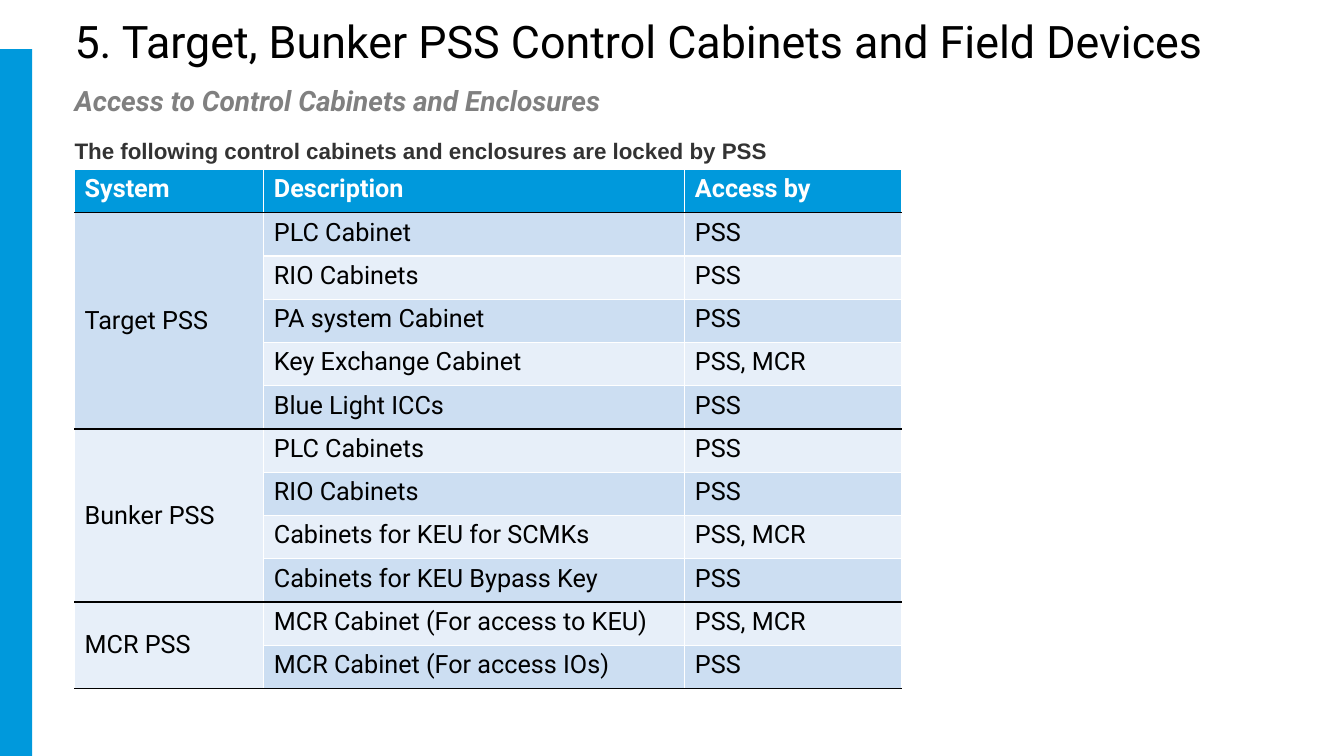
from dataclasses import dataclass

from lxml.etree import SubElement
from pptx import Presentation
from pptx.dml.color import RGBColor
from pptx.enum.shapes import MSO_SHAPE as Preset
from pptx.enum.text import MSO_ANCHOR as Anchor
from pptx.oxml.ns import qn
from pptx.slide import Slide
from pptx.table import _Cell as Cell
from pptx.text.text import TextFrame
from pptx.util import Cm, Pt


@dataclass(frozen=True)
class TextStyle:
    size: float
    color: str
    font: str = "Roboto"
    bold: bool = False
    italic: bool = False


@dataclass(frozen=True)
class Theme:
    accent: str = "0099DC"
    bands: tuple[str, str] = ("E7EFF9", "CCDEF2")
    grid: str = "FFFFFF"
    rule: str = "000000"
    title: TextStyle = TextStyle(32, "000000")
    subtitle: TextStyle = TextStyle(20, "808080", bold=True, italic=True)
    caption: TextStyle = TextStyle(16, "333333", font="Arial", bold=True)
    header: TextStyle = TextStyle(18, "FFFFFF", bold=True)
    body: TextStyle = TextStyle(18, "000000")


@dataclass(frozen=True)
class Heading:
    text: str
    style: TextStyle
    top: float
    width: float
    height: float
    anchor: Anchor = Anchor.TOP


@dataclass(frozen=True)
class System:
    name: str
    cabinets: tuple[tuple[str, str], ...]


THEME = Theme()

HEADINGS = (
    Heading("5. Target, Bunker PSS Control Cabinets and Field Devices",
            THEME.title, 0.15, 31.24, 1.75, Anchor.MIDDLE),
    Heading("Access to Control Cabinets and Enclosures", THEME.subtitle, 1.98, 24.05, 1.12),
    Heading("The following control cabinets and enclosures are locked by PSS",
            THEME.caption, 3.33, 19.66, 0.94),
)

COLUMNS = (("System", 4.77), ("Description", 10.61), ("Access by", 5.45))
ROW_HEIGHT = 1.09

SYSTEMS = (
    System("Target PSS", (
        ("PLC Cabinet", "PSS"),
        ("RIO Cabinets", "PSS"),
        ("PA system Cabinet", "PSS"),
        ("Key Exchange Cabinet", "PSS, MCR"),
        ("Blue Light ICCs", "PSS"),
    )),
    System("Bunker PSS", (
        ("PLC Cabinets", "PSS"),
        ("RIO Cabinets", "PSS"),
        ("Cabinets for KEU for SCMKs", "PSS, MCR"),
        ("Cabinets for KEU Bypass Key", "PSS"),
    )),
    System("MCR PSS", (
        ("MCR Cabinet (For access to KEU)", "PSS, MCR"),
        ("MCR Cabinet (For access IOs)", "PSS"),
    )),
)


def write(frame: TextFrame, text: str, style: TextStyle) -> None:
    run = frame.paragraphs[0].add_run()
    run.text = text
    font = run.font
    font.name, font.size = style.font, Pt(style.size)
    font.bold, font.italic = style.bold, style.italic
    font.color.rgb = RGBColor.from_string(style.color)


def add_heading(slide: Slide, heading: Heading) -> None:
    box = slide.shapes.add_textbox(
        Cm(1.63), Cm(heading.top), Cm(heading.width), Cm(heading.height))
    frame = box.text_frame
    frame.word_wrap = True
    frame.vertical_anchor = heading.anchor
    write(frame, heading.text, heading.style)


def add_side_bar(slide: Slide) -> None:
    bar = slide.shapes.add_shape(Preset.RECTANGLE, 0, Cm(1.24), Cm(0.81), Cm(17.81))
    bar.shadow.inherit = False
    bar.fill.solid()
    bar.fill.fore_color.rgb = RGBColor.from_string(THEME.accent)
    bar.line.fill.background()


def paint(cell: Cell, fill: str, top: str, bottom: str) -> None:
    """Set the four borders, then the fill, of one cell."""
    properties = cell._tc.get_or_add_tcPr()
    edges = {"a:lnL": THEME.grid, "a:lnR": THEME.grid, "a:lnT": top, "a:lnB": bottom}
    for edge, color in edges.items():
        line = SubElement(properties, qn(edge), w=str(Pt(1)))
        SubElement(SubElement(line, qn("a:solidFill")), qn("a:srgbClr"), val=color)
    cell.fill.solid()
    cell.fill.fore_color.rgb = RGBColor.from_string(fill)


def add_access_table(slide: Slide) -> None:
    row_count = 1 + sum(len(system.cabinets) for system in SYSTEMS)
    table = slide.shapes.add_table(
        row_count, len(COLUMNS), Cm(1.88), Cm(4.27),
        Cm(sum(width for _, width in COLUMNS)), Cm(ROW_HEIGHT * row_count)).table
    for row in table.rows:
        row.height = Cm(ROW_HEIGHT)

    # Header row
    for index, (label, width) in enumerate(COLUMNS):
        table.columns[index].width = Cm(width)
        cell = table.cell(0, index)
        paint(cell, THEME.accent, THEME.grid, THEME.rule)
        write(cell.text_frame, label, THEME.header)

    # One block of rows per system, ruled off in black
    first = 1
    for system in SYSTEMS:
        last = first + len(system.cabinets) - 1
        system_cell = table.cell(first, 0)
        system_cell.merge(table.cell(last, 0))
        system_cell.vertical_anchor = Anchor.MIDDLE
        write(system_cell.text_frame, system.name, THEME.body)
        for row, cabinet in enumerate(system.cabinets, first):
            top = THEME.rule if row == first else THEME.grid
            bottom = THEME.rule if row == last else THEME.grid
            paint(table.cell(row, 0), THEME.bands[first % 2], top,
                  THEME.rule if row == first else bottom)
            for column, text in enumerate(cabinet, 1):
                cell = table.cell(row, column)
                paint(cell, THEME.bands[row % 2], top, bottom)
                write(cell.text_frame, text, THEME.body)
        first = last + 1


def main() -> None:
    deck = Presentation()
    deck.slide_width, deck.slide_height = Cm(33.87), Cm(19.05)
    slide = deck.slides.add_slide(deck.slide_layouts[6])
    add_side_bar(slide)
    add_access_table(slide)
    for heading in HEADINGS:
        add_heading(slide, heading)
    deck.save("out.pptx")


if __name__ == "__main__":
    main()
